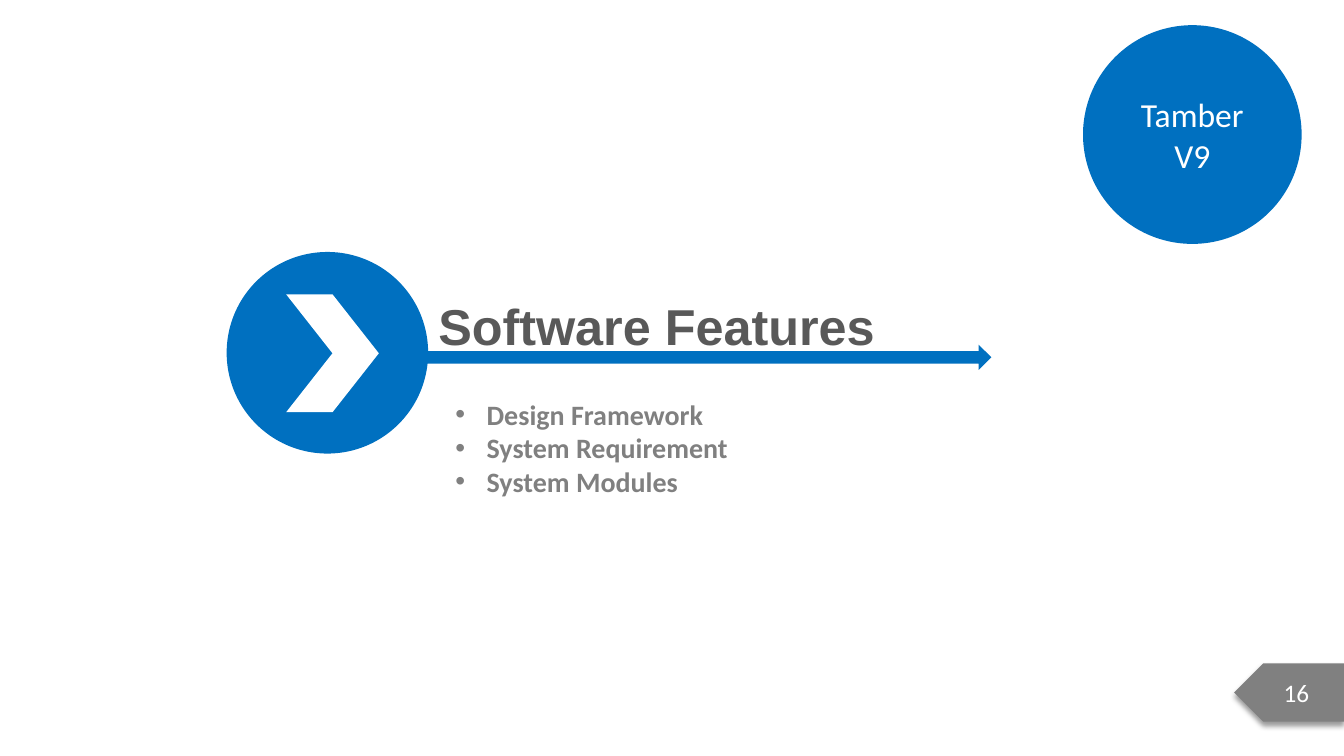
from dataclasses import dataclass

from lxml.etree import SubElement
from pptx import Presentation
from pptx.dml.color import RGBColor
from pptx.enum.shapes import MSO_SHAPE as Preset
from pptx.enum.text import MSO_ANCHOR as Anchor, MSO_AUTO_SIZE as AutoSize, PP_ALIGN as Align
from pptx.oxml.ns import qn
from pptx.util import Inches, Pt

COLORS = {
    "blue": "0070C0",
    "white": "FFFFFF",
    "title": "595959",
    "gray": "808080",
    "shadow": "000000",
}


@dataclass(frozen=True)
class Figure:
    preset: Preset
    box: tuple[float, float, float, float]
    fill: str
    text: str = ""
    size: int = 18


FIGURES = {
    "product badge": Figure(Preset.OVAL, (10.75, 0.25, 2.17, 2.17), "blue", "Tamber V9", 24),
    "section circle": Figure(Preset.OVAL, (2.25, 2.5, 2, 2), "blue"),
    "section chevron": Figure(Preset.CHEVRON, (2.84, 2.92, 0.92, 1.17), "white"),
    "title arrow": Figure(Preset.RIGHT_ARROW, (4.17, 3.42, 5.67, 0.25), "blue"),
    "page tag": Figure(Preset.PENTAGON, (12.25, 6.58, 1.09, 0.58), "gray", "16"),
}
FEATURES = ["Design Framework", "System Requirement", "System Modules"]


def rgb(name: str) -> RGBColor:
    return RGBColor.from_string(COLORS[name])


def write(paragraph, text: str, *, size: int, color: str, font: str = "Calibri",
          bold: bool = False, align=Align.LEFT, spacing: float = 1.0) -> None:
    paragraph.alignment = align
    paragraph.line_spacing = spacing
    paragraph.space_before = Pt(0)
    run = paragraph.add_run()
    run.text = text
    run.font.name = font
    run.font.size = Pt(size)
    run.font.bold = bold
    run.font.color.rgb = rgb(color)


def place_text(placeholder, box: tuple[float, float, float, float]):
    """Move a placeholder and return its text frame, fitted to one-line texts."""
    placeholder.left, placeholder.top, placeholder.width, placeholder.height = map(Inches, box)
    frame = placeholder.text_frame
    frame.word_wrap = False
    frame.auto_size = AutoSize.SHAPE_TO_FIT_TEXT
    frame.vertical_anchor = Anchor.TOP
    return frame


def add_bullet(paragraph, indent: float = 0.31) -> None:
    properties = paragraph._p.get_or_add_pPr()
    properties.set("marL", str(Inches(indent)))
    properties.set("indent", str(-Inches(indent)))
    SubElement(properties, qn("a:buFont"), typeface="Arial")
    SubElement(properties, qn("a:buChar"), char="•")


def add_figure(slide, figure: Figure):
    shape = slide.shapes.add_shape(figure.preset, *map(Inches, figure.box))
    shape.shadow.inherit = False
    shape.fill.solid()
    shape.fill.fore_color.rgb = rgb(figure.fill)
    shape.line.fill.background()
    if figure.text:
        frame = shape.text_frame
        frame.word_wrap = True
        frame.vertical_anchor = Anchor.MIDDLE
        write(frame.paragraphs[0], figure.text, size=figure.size, color="white",
              align=Align.CENTER)
    return shape


def add_shadow(shape) -> None:
    effects = shape._element.spPr.find(qn("a:effectLst"))
    shadow = SubElement(effects, qn("a:outerShdw"), blurRad=str(Pt(4)), dist=str(Pt(3)),
                        dir=str(90 * 60000), algn="t", rotWithShape="0")
    color = SubElement(shadow, qn("a:srgbClr"), val=COLORS["shadow"])
    SubElement(color, qn("a:alpha"), val="40000")


def main() -> None:
    presentation = Presentation()
    presentation.slide_width = Inches(13.34)
    presentation.slide_height = Inches(7.5)
    slide = presentation.slides.add_slide(presentation.slide_layouts[1])

    # Circles, chevron, arrow and page tag
    shapes = {name: add_figure(slide, figure) for name, figure in FIGURES.items()}
    page_tag = shapes["page tag"]
    page_tag._element.spPr.xfrm.set("flipH", "1")
    add_shadow(page_tag)

    # Section title
    title = place_text(slide.shapes.title, (4.25, 2.58, 4.58, 0.9))
    write(title.paragraphs[0], "Software Features", size=36, color="title", font="Arial",
          bold=True, spacing=1.5)

    # Feature list
    body = place_text(slide.placeholders[1], (4.42, 3.89, 2.93, 1.11))
    for index, feature in enumerate(FEATURES):
        paragraph = body.add_paragraph() if index else body.paragraphs[0]
        write(paragraph, feature, size=20, color="gray", bold=True)
        add_bullet(paragraph)

    presentation.save("out.pptx")


if __name__ == "__main__":
    main()
